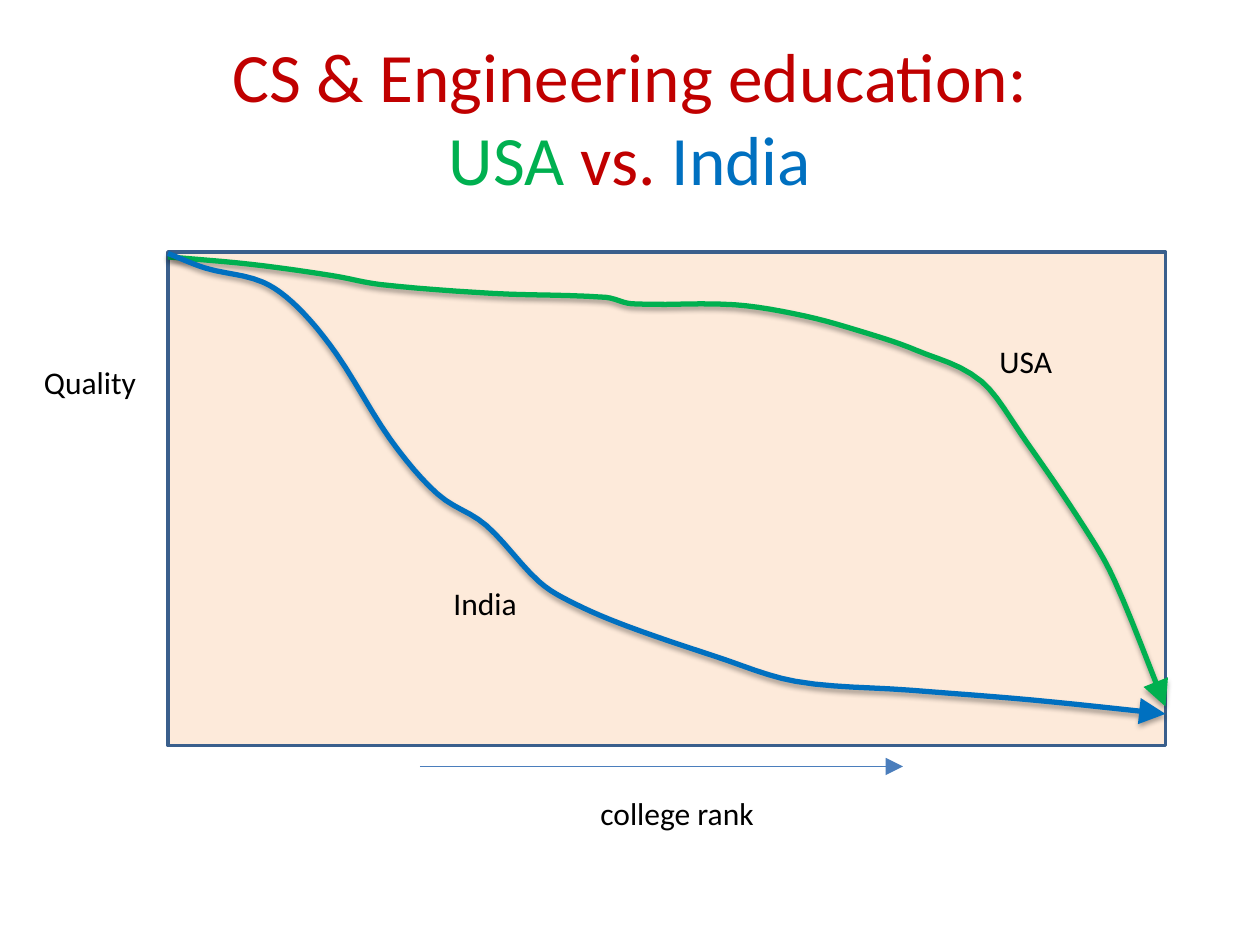
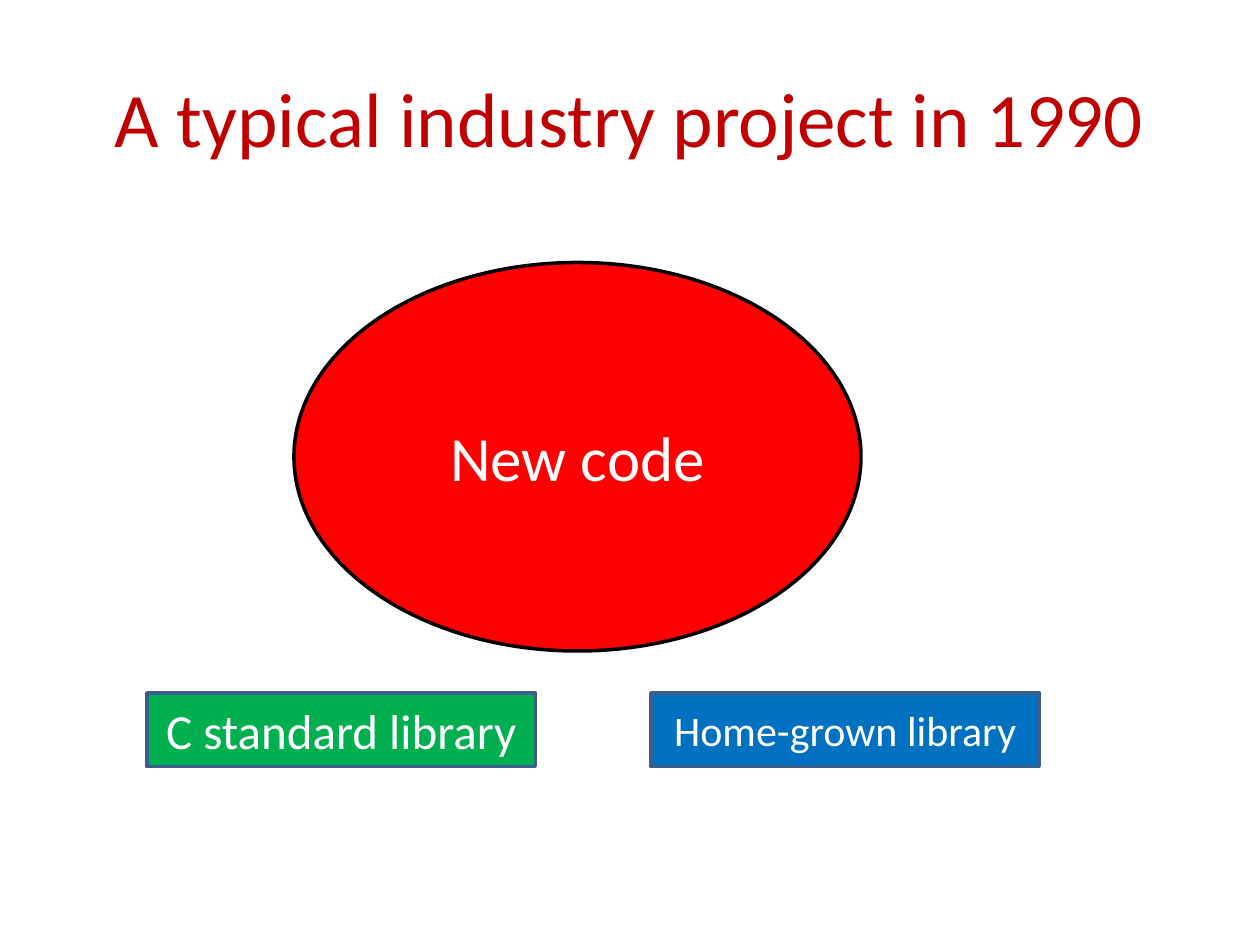
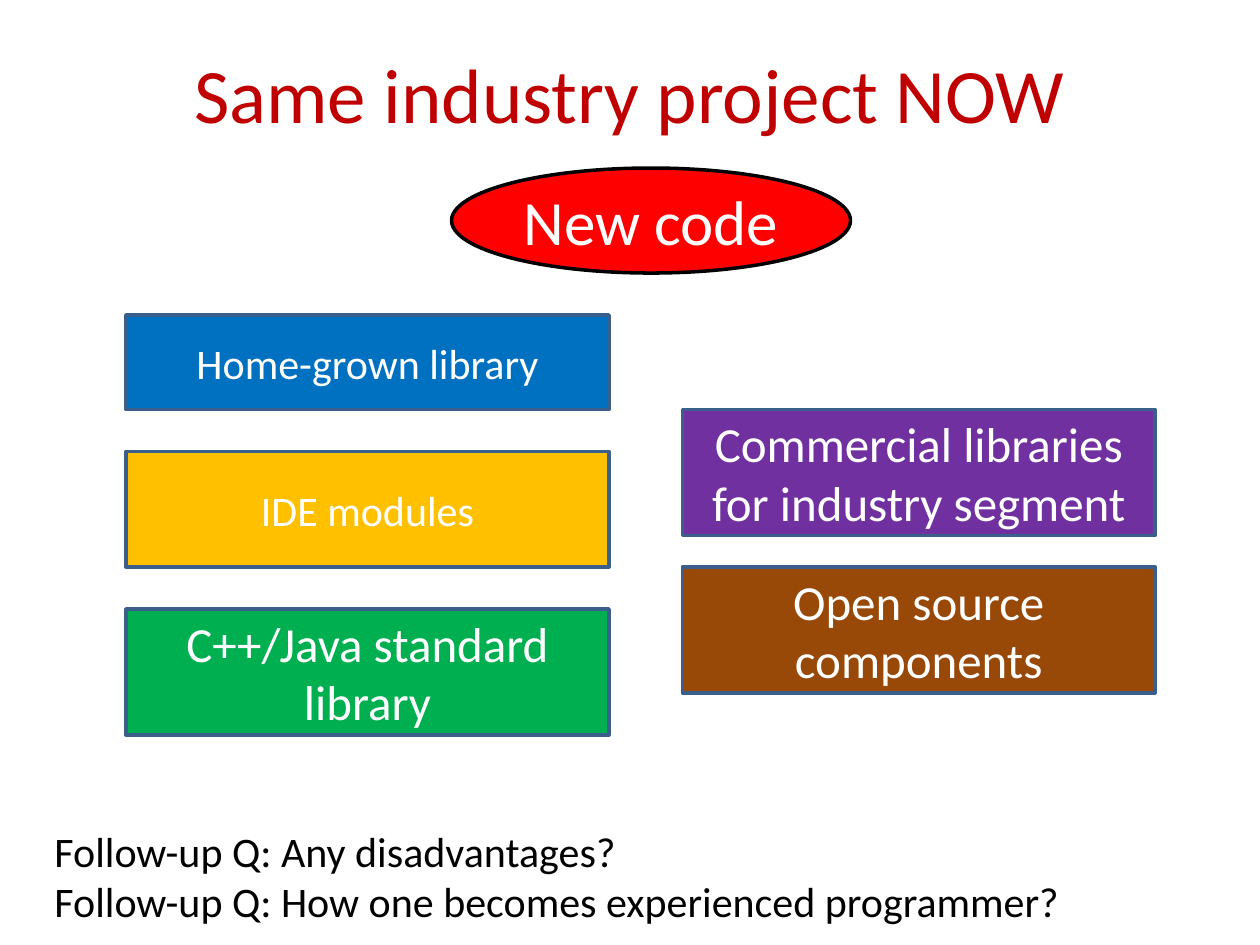
from dataclasses import dataclass
from typing import NamedTuple

import lxml.etree
import pptx
import pptx.dml.color
import pptx.enum.shapes
import pptx.enum.text
import pptx.oxml.ns
import pptx.util

FONT = "Calibri"
COLORS = {
    "title": "C00000",
    "text": "000000",
    "white": "FFFFFF",
    "plot": "FDEADA",
    "border": "3A5F8C",
    "axis": "4B7EBC",
    "green": "00B050",
    "blue": "0070C0",
    "red": "FF0000",
    "amber": "FFC000",
    "purple": "7030A0",
    "brown": "984807",
}

prs = pptx.Presentation()
prs.slide_width = pptx.util.Inches(10)
prs.slide_height = pptx.util.Inches(7.5)
COLUMN = prs.slide_width / 120
ROW = prs.slide_height / 90

RECT = pptx.enum.shapes.MSO_SHAPE.RECTANGLE
OVAL = pptx.enum.shapes.MSO_SHAPE.OVAL
STRAIGHT = pptx.enum.shapes.MSO_CONNECTOR.STRAIGHT
CENTER = pptx.enum.text.PP_ALIGN.CENTER
MIDDLE = pptx.enum.text.MSO_ANCHOR.MIDDLE


class Cell(NamedTuple):
    col: float
    row: float
    cols: float
    rows: float

    def emu(self) -> tuple[int, int, int, int]:
        return (round(self.col * COLUMN), round(self.row * ROW),
                round(self.cols * COLUMN), round(self.rows * ROW))


class Knot(NamedTuple):
    rank: float
    drop: float


class Piece(NamedTuple):
    text: str
    color: str = "title"


@dataclass
class Block:
    text: str
    fill: str
    rows: float
    size: float = 28


@dataclass
class Label:
    text: str
    cell: Cell
    size: float = 18
    wrap: bool = True


PLOT = Cell(16, 24, 95, 47)

USA_KNOTS = [Knot(*k) for k in (
    (0, 1), (8.3, 2.5), (16.5, 4.8), (21.3, 6.6), (32.6, 8.4), (43.9, 9.2),
    (46.5, 10.5), (56.8, 10.7), (63.9, 13), (70.3, 16.6), (75, 19.9),
    (81.6, 26.3), (86, 38.3), (91.9, 55.9), (94.9, 66.6), (100, 92.1),
)]
INDIA_KNOTS = [Knot(*k) for k in (
    (0, 0.3), (3.8, 3.3), (9.5, 6.1), (13, 11.2), (16.9, 20.7), (22.3, 38),
    (27, 49), (31.9, 55.4), (37.2, 66.8), (40.7, 71.2), (46, 75.8),
    (54.8, 81.9), (62.9, 87), (74.4, 88.8), (86.7, 90.8), (100, 93.6),
)]


def rgb(name: str) -> pptx.dml.color.RGBColor:
    return pptx.dml.color.RGBColor.from_string(COLORS[name])


def add_xml(parent, tag: str, **attrs: str):
    return lxml.etree.SubElement(parent, pptx.oxml.ns.qn(tag), attrs)


def style_run(r, size: float, color: str) -> None:
    r.font.name = FONT
    r.font.size = pptx.util.Pt(size)
    r.font.color.rgb = rgb(color)


def style_text(tf, size: float, color: str) -> None:
    for p in tf.paragraphs:
        for r in p.runs:
            style_run(r, size, color)


def style_line(sp, color: str, width: float) -> None:
    sp.line.color.rgb = rgb(color)
    sp.line.width = pptx.util.Pt(width)


def add_arrowhead(sp) -> None:
    ln = sp._element.spPr.find(pptx.oxml.ns.qn("a:ln"))
    add_xml(ln, "a:tailEnd", type="triangle", w="lg", len="lg")


def add_soft_shadow(sp) -> None:
    sp.shadow.inherit = False
    effects = sp._element.spPr.find(pptx.oxml.ns.qn("a:effectLst"))
    shadow = add_xml(effects, "a:outerShdw", blurRad=str(pptx.util.Pt(3.1)),
                     dist=str(pptx.util.Pt(1.8)), dir="5400000", rotWithShape="0")
    shade = add_xml(shadow, "a:srgbClr", val=COLORS["text"])
    add_xml(shade, "a:alpha", val="35000")


def new_slide():
    return prs.slides.add_slide(prs.slide_layouts[6])


def add_title(s, *lines: list[Piece], size: float = 44, rows: float = 15) -> None:
    tf = s.shapes.add_textbox(*Cell(6, 3.6, 108, rows).emu()).text_frame
    tf.word_wrap = True
    tf.vertical_anchor = MIDDLE
    p = tf.paragraphs[0]
    p.alignment = CENTER
    for i, line in enumerate(lines):
        if i:
            p.add_line_break()
        for piece in line:
            r = p.add_run()
            r.text = piece.text
            style_run(r, size, piece.color)


def add_label(s, label: Label) -> None:
    tf = s.shapes.add_textbox(*label.cell.emu()).text_frame
    tf.text = label.text
    tf.word_wrap = label.wrap
    style_text(tf, label.size, "text")


def add_box(s, cell: Cell, fill: str, text: str = "", size: float = 28,
            kind: int = RECT, border: str = "border") -> None:
    sp = s.shapes.add_shape(kind, *cell.emu())
    sp.shadow.inherit = False
    sp.fill.solid()
    sp.fill.fore_color.rgb = rgb(fill)
    style_line(sp, border, 2)
    tf = sp.text_frame
    tf.text = text
    tf.word_wrap = True
    tf.vertical_anchor = MIDDLE
    tf.paragraphs[0].alignment = CENTER
    style_text(tf, size, "white")


def add_new_code(s, cell: Cell) -> None:
    add_box(s, cell, "red", "New code", 36, OVAL, "text")


def add_stack(s, col: float, row: float, cols: float, gap: float,
              blocks: list[Block]) -> None:
    for block in blocks:
        add_box(s, Cell(col, row, cols, block.rows), block.fill, block.text, block.size)
        row += block.rows + gap


def slope(knots: list[Knot], i: int) -> float:
    before = knots[max(i - 1, 0)]
    after = knots[min(i + 1, len(knots) - 1)]
    return (after.drop - before.drop) / (after.rank - before.rank)


def smooth_points(knots: list[Knot], steps: int = 6) -> list[Knot]:
    points = [knots[0]]
    for i, (a, b) in enumerate(zip(knots, knots[1:])):
        span = b.rank - a.rank
        start_pull = slope(knots, i) * span
        end_pull = slope(knots, i + 1) * span
        for step in range(1, steps + 1):
            t = step / steps
            ease = t * t * (3 - 2 * t)
            drop = (a.drop + (b.drop - a.drop) * ease
                    + start_pull * t * (1 - t) ** 2 - end_pull * t * t * (1 - t))
            points.append(Knot(a.rank + span * t, drop))
    return points


def add_curve(s, color: str, knots: list[Knot]) -> None:
    left, top, width, height = PLOT.emu()
    start, *rest = [(left + width * k.rank / 100, top + height * k.drop / 100)
                    for k in smooth_points(knots)]
    builder = s.shapes.build_freeform(*start)
    builder.add_line_segments(rest, close=False)
    sp = builder.convert_to_shape()
    sp.fill.background()
    style_line(sp, color, 3)
    add_arrowhead(sp)
    add_soft_shadow(sp)


def add_rank_arrow(s, col: float, row: float, cols: float) -> None:
    x, y, w, _ = Cell(col, row, cols, 0).emu()
    sp = s.shapes.add_connector(STRAIGHT, x, y, x + w, y)
    style_line(sp, "axis", 0.75)
    add_arrowhead(sp)
    add_xml(sp._element.spPr, "a:effectLst")


def education_slide() -> None:
    s = new_slide()
    add_title(s, [Piece("CS & Engineering education:")],
              [Piece("USA", "green"), Piece(" vs. "), Piece("India", "blue")], size=39.6)
    add_box(s, PLOT, "plot")
    add_rank_arrow(s, 40, 73, 46)
    add_curve(s, "green", USA_KNOTS)
    add_curve(s, "blue", INDIA_KNOTS)
    for label in (
        Label("college rank", Cell(56, 75, 17.2, 4.8)),
        Label("Quality", Cell(3, 34, 14, 4.8)),
        Label("India", Cell(42, 55, 8.5, 4.8), wrap=False),
        Label("USA", Cell(94, 32, 7.4, 4.8), wrap=False),
    ):
        add_label(s, label)


def project_1990_slide() -> None:
    s = new_slide()
    add_title(s, [Piece("A typical industry project in 1990")])
    libraries = [Block("C standard library", "green", 7),
                 Block("Home-grown library", "blue", 7, 24)]
    for i, library in enumerate(libraries):
        add_stack(s, 14 + 48 * i, 66, 37, 0, [library])
    add_new_code(s, Cell(28, 25, 54, 37))


def project_now_slide() -> None:
    s = new_slide()
    add_title(s, [Piece("Same industry project NOW")], rows=10.4)
    add_stack(s, 12, 30, 46, 4, [
        Block("Home-grown library", "blue", 9, 24),
        Block("IDE modules", "amber", 11, 24),
        Block("C++/Java standard library", "green", 12),
    ])
    add_stack(s, 65, 39, 45, 3, [
        Block("Commercial libraries for industry segment", "purple", 12),
        Block("Open source components", "brown", 12),
    ])
    add_new_code(s, Cell(43, 16, 38, 10))
    add_label(s, Label("Follow-up Q: Any disadvantages?\n"
                       "Follow-up Q: How one becomes experienced programmer?",
                       Cell(4, 78, 99, 11), 24))


def main() -> None:
    education_slide()
    project_1990_slide()
    project_now_slide()
    prs.save("out.pptx")


if __name__ == "__main__":
    main()
